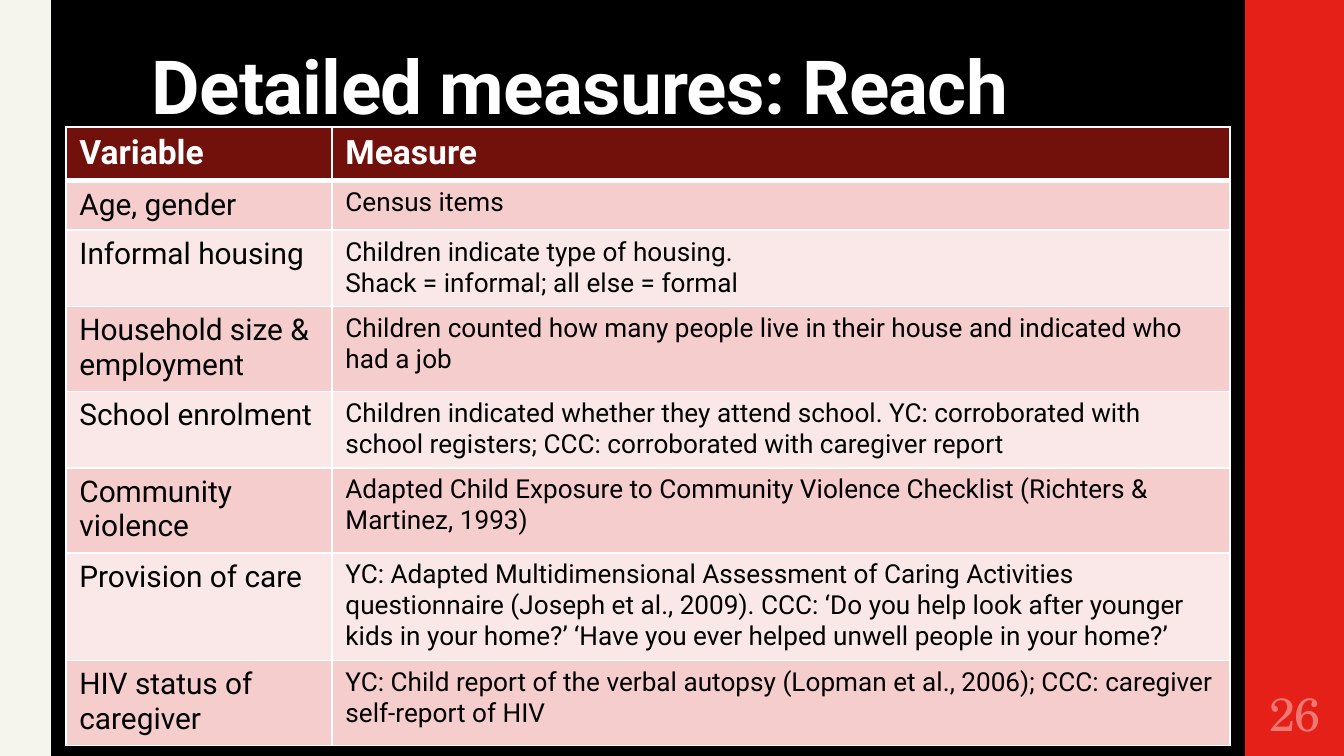
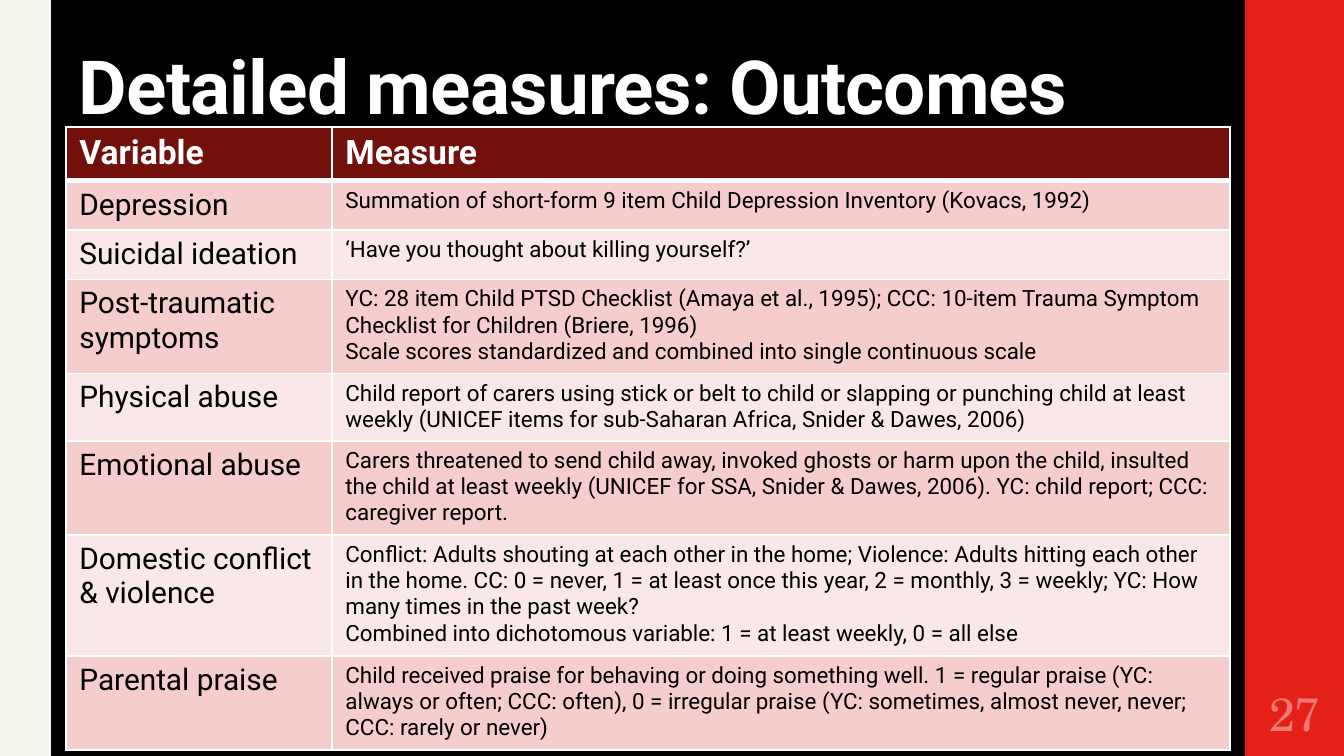
from lxml.etree import SubElement
from pptx import Presentation
from pptx.dml.color import RGBColor
from pptx.enum.shapes import MSO_SHAPE
from pptx.enum.text import MSO_ANCHOR, PP_ALIGN
from pptx.oxml import parse_xml
from pptx.oxml.ns import nsdecls, qn
from pptx.util import Pt

SCALE = 914400 / 134.4
WIDTH, HEIGHT = 1344, 756
BODY_FONT = "Roboto"
NUMBER_FONT = "TeX Gyre Schola"
COLORS = {
    "background": "000000",
    "red": "E52018",
    "cream": "F5F4ED",
    "white": "FFFFFF",
    "black": "000000",
    "header": "72100C",
    "odd": "F5CDCC",
    "even": "FAE8E8",
    "number": "F07873",
}
RED_BAND = (1245, 0, 100, HEIGHT)
CREAM_BAND = (0, 0, 51, HEIGHT)
NUMBER_BOX = (1245, 680, 100, 66)
TABLE_BOX = (66, 127, 1164, 384)
VARIABLE_WIDTH = 266
HEADER = ("Variable", "Measure")

REACH = [
    ("Age, gender", "Census items"),
    ("Informal housing",
     "Children indicate type of housing.\n"
     "Shack = informal; all else = formal"),
    ("Household size & employment",
     "Children counted how many people live in their house and indicated "
     "who had a job"),
    ("School enrolment",
     "Children indicated whether they attend school. YC: corroborated with "
     "school registers; CCC: corroborated with caregiver report"),
    ("Community violence",
     "Adapted Child Exposure to Community Violence Checklist (Richters & "
     "Martinez, 1993)"),
    ("Provision of care",
     "YC: Adapted Multidimensional Assessment of Caring Activities "
     "questionnaire (Joseph et al., 2009). CCC: ‘Do you help look after "
     "younger kids in your home?’ ‘Have you ever helped unwell people in "
     "your home?’"),
    ("HIV status of caregiver",
     "YC: Child report of the verbal autopsy (Lopman et al., 2006); CCC: "
     "caregiver self-report of HIV"),
]

OUTCOMES = [
    ("Depression",
     "Summation of short-form 9 item Child Depression Inventory "
     "(Kovacs, 1992)"),
    ("Suicidal ideation", "‘Have you thought about killing yourself?’"),
    ("Post-traumatic symptoms",
     "YC: 28 item Child PTSD Checklist (Amaya et al., 1995); CCC: 10-item "
     "Trauma Symptom Checklist for Children (Briere, 1996)\n"
     "Scale scores standardized and combined into single continuous scale"),
    ("Physical abuse",
     "Child report of carers using stick or belt to child or slapping or "
     "punching child at least weekly (UNICEF items for sub-Saharan Africa, "
     "Snider & Dawes, 2006)"),
    ("Emotional abuse",
     "Carers threatened to send child away, invoked ghosts or harm upon the "
     "child, insulted the child at least weekly (UNICEF for SSA, Snider & "
     "Dawes, 2006). YC: child report; CCC: caregiver report."),
    ("Domestic conflict & violence",
     "Conflict: Adults shouting at each other in the home; Violence: Adults "
     "hitting each other in the home. CC: 0 = never, 1 = at least once this "
     "year, 2 = monthly, 3 = weekly; YC: How many times in the past week?\n"
     "Combined into dichotomous variable: 1 = at least weekly, 0 = all else"),
    ("Parental praise",
     "Child received praise for behaving or doing something well. 1 = "
     "regular praise (YC: always or often; CCC: often), 0 = irregular praise "
     "(YC: sometimes, almost never, never; CCC: rarely or never)"),
]


def px(n):
    return round(n * SCALE)


def emu(box):
    return [px(n) for n in box]


def rgb(name):
    return RGBColor.from_string(COLORS[name])


def set_font(p, size, color, name=BODY_FONT, bold=False):
    p.font.size = Pt(size)
    p.font.name = name
    p.font.bold = bold
    p.font.color.rgb = rgb(color)


def add_band(s, box, color):
    sp = s.shapes.add_shape(MSO_SHAPE.RECTANGLE, *emu(box))
    sp.shadow.inherit = False
    sp.fill.solid()
    sp.fill.fore_color.rgb = rgb(color)
    sp.line.fill.background()


def add_text(s, box, text, anchor, insets):
    tf = s.shapes.add_textbox(*emu(box)).text_frame
    tf.word_wrap = True
    tf.vertical_anchor = anchor
    tf.margin_left, tf.margin_top, tf.margin_right, tf.margin_bottom = emu(insets)
    p = tf.paragraphs[0]
    p.text = text
    return p


def add_title(s, box, text):
    p = add_text(s, box, text, MSO_ANCHOR.BOTTOM, (13, 4, 13, 7))
    p.line_spacing = 0.9
    set_font(p, 40, "white", bold=True)
    p.runs[0].font._element.set("spc", "-40")


def add_number(s, box, number):
    p = add_text(s, box, str(number), MSO_ANCHOR.MIDDLE, (7, 7, 7, 7))
    p.alignment = PP_ALIGN.CENTER
    set_font(p, 25, "number", NUMBER_FONT)


def set_borders(cell, bottom):
    tc_pr = cell._tc.get_or_add_tcPr()
    widths = {"lnL": 1, "lnR": 1, "lnT": 1, "lnB": bottom}
    for i, (tag, width) in enumerate(widths.items()):
        ln = parse_xml(f'<a:{tag} {nsdecls("a")} w="{Pt(width)}"/>')
        fill = SubElement(ln, qn("a:solidFill"))
        SubElement(fill, qn("a:srgbClr"), val=COLORS["white"])
        tc_pr.insert(i, ln)


def fill_cell(cell, text, fill, size, color, bold, bottom):
    cell.text = text
    cell.fill.solid()
    cell.fill.fore_color.rgb = rgb(fill)
    for p in cell.text_frame.paragraphs:
        set_font(p, size, color, bold=bold)
    set_borders(cell, bottom)


def add_measures(s, box, rows, measure_size):
    rows = [HEADER, *rows]
    table = s.shapes.add_table(len(rows), len(HEADER), *emu(box)).table
    table.columns[0].width = px(VARIABLE_WIDTH)
    table.columns[1].width = px(box[2] - VARIABLE_WIDTH)
    for i, texts in enumerate(rows):
        table.rows[i].height = px(box[3] / len(rows))
        for j, text in enumerate(texts):
            cell = table.cell(i, j)
            if i == 0:
                fill_cell(cell, text, "header", 18, "white", True, 3)
            else:
                fill = "odd" if i % 2 else "even"
                size = measure_size if j else 16
                fill_cell(cell, text, fill, size, "black", False, 1)


def add_slide(prs, title, title_box, rows, measure_size, number):
    s = prs.slides.add_slide(prs.slide_layouts[6])
    s.background.fill.solid()
    s.background.fill.fore_color.rgb = rgb("background")
    add_band(s, RED_BAND, "red")
    add_band(s, CREAM_BAND, "cream")
    add_title(s, title_box, title)
    add_measures(s, TABLE_BOX, rows, measure_size)
    add_number(s, NUMBER_BOX, number)


def main():
    prs = Presentation()
    prs.slide_width, prs.slide_height = px(WIDTH), px(HEIGHT)
    add_slide(prs, "Detailed measures: Reach", (139, -16, 1068, 154),
              REACH, 14, 26)
    add_slide(prs, "Detailed measures: Outcomes", (66, -16, 1141, 154),
              OUTCOMES, 12, 27)
    prs.save("out.pptx")


if __name__ == "__main__":
    main()
